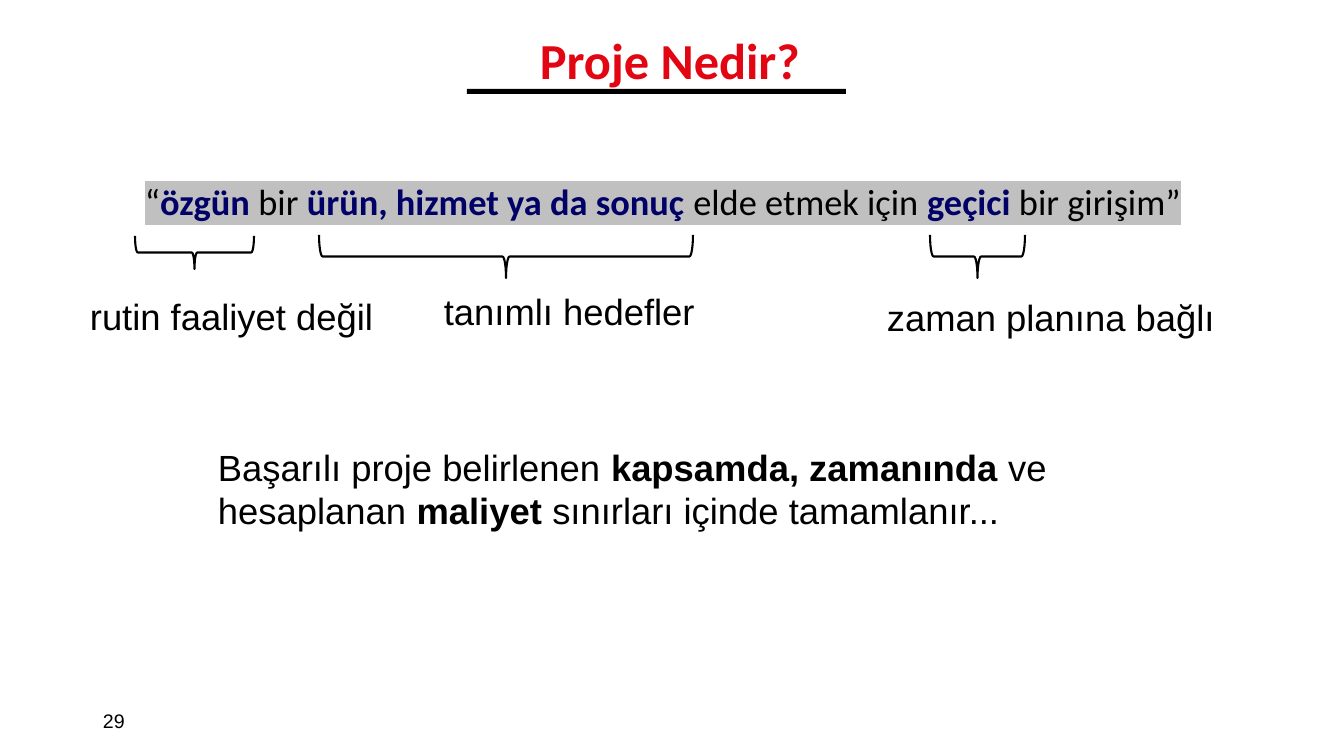
from lxml.etree import SubElement
from pptx import Presentation
from pptx.dml.color import RGBColor
from pptx.enum.shapes import MSO_SHAPE
from pptx.enum.text import MSO_ANCHOR, MSO_AUTO_SIZE
from pptx.oxml.ns import qn
from pptx.util import Pt

SCALE = 12192000 / 1344
BLACK = RGBColor(0x00, 0x00, 0x00)
NAVY = RGBColor(0x00, 0x00, 0x66)
RED = RGBColor(0xE2, 0x06, 0x13)
HIGHLIGHT = RGBColor(0xC0, 0xC0, 0xC0)

TITLE = "Proje Nedir?"
PAGE_NUMBER = "29"
DEFINITION = [
    ("“", False),
    ("özgün", True),
    (" bir ", False),
    ("ürün, hizmet ya da sonuç ", True),
    ("elde etmek için ", False),
    ("geçici", True),
    (" bir girişim”", False),
]
SUCCESS = [
    ("Başarılı proje belirlenen ", False),
    ("kapsamda, zamanında", True),
    (" ve hesaplanan ", False),
    ("maliyet", True),
    (" sınırları içinde tamamlanır...", False),
]
LABELS = [
    ("rutin faaliyet değil", (80, 289, 314, 54)),
    ("tanımlı hedefler", (434, 284, 323, 54)),
    ("zaman planına bağlı", (877, 290, 387, 54)),
]
BRACES = [(135, 236, 119, 33), (319, 235, 374, 43), (930, 235, 95, 43)]
UNDERLINE = (467, 89, 379, 5)


def px(*lengths):
    return [round(length * SCALE) for length in lengths]


def add_text(page, area, pieces, size=26, font="Arial", color=BLACK,
             bold_color=BLACK, highlight=None, wrap=True):
    box = page.shapes.add_textbox(*px(*area))
    frame = box.text_frame
    frame.word_wrap = wrap
    frame.auto_size = MSO_AUTO_SIZE.SHAPE_TO_FIT_TEXT
    para = frame.paragraphs[0]
    for words, bold in pieces:
        span = para.add_run()
        span.text = words
        span.font.size = Pt(size)
        span.font.bold = bold
        span.font.color.rgb = bold_color if bold else color
        if highlight is not None:
            mark = SubElement(span.font._element, qn("a:highlight"))
            SubElement(mark, qn("a:srgbClr"), val=str(highlight))
        span.font.name = font
    return box


def add_brace(page, left, top, width, height):
    turned_left = left + (width - height) / 2
    turned_top = top + (height - width) / 2
    brace = page.shapes.add_shape(
        MSO_SHAPE.RIGHT_BRACE, *px(turned_left, turned_top, height, width))
    brace.rotation = 90
    brace.shadow.inherit = False
    brace.fill.background()
    brace.line.color.rgb = BLACK
    brace.line.width = Pt(1.5)


def main():
    deck = Presentation()
    deck.slide_width, deck.slide_height = px(1344, 756)
    page = deck.slides.add_slide(deck.slide_layouts[6])

    number = add_text(page, (93, 701, 302, 40), [(PAGE_NUMBER, False)], size=14)
    number.text_frame.auto_size = MSO_AUTO_SIZE.NONE
    number.text_frame.vertical_anchor = MSO_ANCHOR.MIDDLE

    add_text(page, (135, 174, 1081, 54), DEFINITION, font="Calibri",
             bold_color=NAVY, highlight=HIGHLIGHT)
    for words, area in LABELS:
        add_text(page, area, [(words, False)])
    add_text(page, (208, 440, 929, 99), SUCCESS)
    add_text(page, (530, 24, 283, 72), [(TITLE, True)], size=36,
             font="Calibri", bold_color=RED, wrap=False)

    for area in BRACES:
        add_brace(page, *area)

    underline = page.shapes.add_shape(MSO_SHAPE.RECTANGLE, *px(*UNDERLINE))
    underline.shadow.inherit = False
    underline.fill.solid()
    underline.fill.fore_color.rgb = BLACK
    underline.line.fill.background()

    deck.save("out.pptx")


if __name__ == "__main__":
    main()
